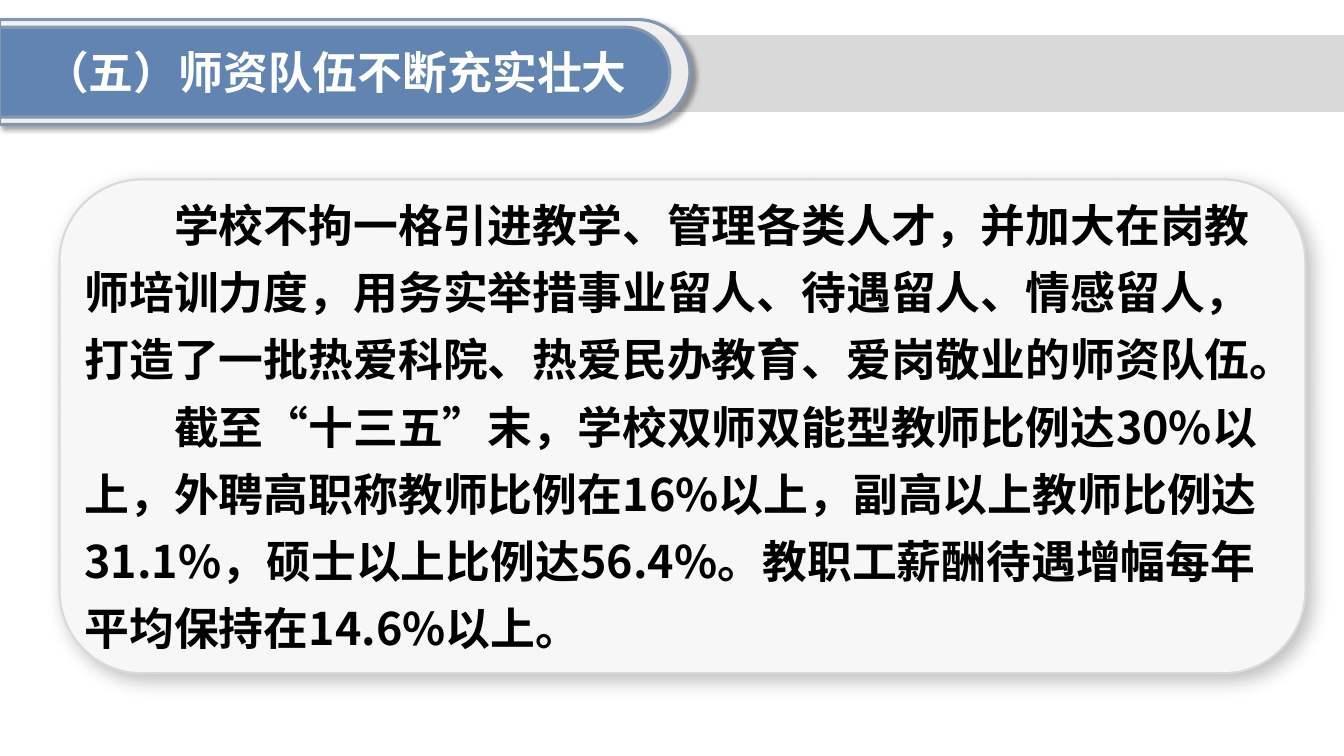
from lxml import etree
from pptx import Presentation
from pptx.dml.color import RGBColor
from pptx.enum import dml, shapes, text
from pptx.oxml import ns
from pptx.util import Pt

TITLE = "（五）师资队伍不断充实壮大"
BODY = [
    "学校不拘一格引进教学、管理各类人才，并加大在岗教师培训力度，用务实举措事业留人、待遇留人、情感留人，打造了一批热爱科院、热爱民办教育、爱岗敬业的师资队伍。",
    "截至“十三五”末，学校双师双能型教师比例达30%以上，外聘高职称教师比例在16%以上，副高以上教师比例达31.1%，硕士以上比例达56.4%。教职工薪酬待遇增幅每年平均保持在14.6%以上。",
]
FONT = "Noto Sans CJK SC"
WHITE = RGBColor(0xFF, 0xFF, 0xFF)
BLACK = RGBColor(0, 0, 0)
LIGHT_GRAY = RGBColor(0xD9, 0xD9, 0xD9)
BLUE = RGBColor(0x46, 0x6F, 0xA6)
BLUE_GRAY = RGBColor(0x84, 0x97, 0xB0)
HATCH = RGBColor(0xEE, 0xEE, 0xEE)
PAPER = RGBColor(0xF9, 0xF9, 0xF9)

TITLE_TABS = [
    ((-0.36, 14.04, 493.2, 74.88), WHITE, (40, 4, 3)),
    ((-0.36, 19.44, 478.8, 64.08), BLUE, None),
]
CARD = (42.48, 128.16, 889.92, 352.8)


def add_child(parent, tag, **attributes):
    child = etree.SubElement(parent, ns.qn(tag))
    for name, value in attributes.items():
        child.set(name, str(value))
    return child


def add_turned(kind, box, line_color, line_width):
    left, top, width, height = box
    offset = (width - height) / 2
    shape = slide.shapes.add_shape(
        kind, Pt(left + offset), Pt(top - offset), Pt(height), Pt(width))
    shape.rotation = 90
    shape.shadow.inherit = False
    shape.line.color.rgb = line_color
    shape.line.width = Pt(line_width)
    return shape


def add_shadow(shape, opacity, blur, distance):
    effects = shape._element.spPr.find(ns.qn("a:effectLst"))
    shadow = add_child(effects, "a:outerShdw", blurRad=Pt(blur), dist=Pt(distance),
                       dir=45 * 60000, algn="tl", rotWithShape=0)
    color = add_child(shadow, "a:srgbClr", val="000000")
    add_child(color, "a:alpha", val=opacity * 1000)


def add_text(box, paragraphs, color, indent, alignment=None, spacing=None):
    frame = slide.shapes.add_textbox(*map(Pt, box)).text_frame
    frame.word_wrap = True
    frame.auto_size = text.MSO_AUTO_SIZE.SHAPE_TO_FIT_TEXT
    for index, content in enumerate(paragraphs):
        paragraph = frame.add_paragraph() if index else frame.paragraphs[0]
        paragraph.alignment = alignment
        paragraph.line_spacing = spacing
        properties = paragraph._p.get_or_add_pPr()
        properties.set("marL", "0")
        properties.set("indent", str(Pt(indent)))
        run = paragraph.add_run()
        run.text = content
        run.font.size = Pt(32)
        run.font.bold = True
        run.font.color.rgb = color
        run.font.name = FONT
        add_child(run._r.get_or_add_rPr(), "a:ea", typeface=FONT)


presentation = Presentation()
presentation.slide_width = Pt(960)
presentation.slide_height = Pt(540)
slide = presentation.slides.add_slide(presentation.slide_layouts[6])

band = slide.shapes.add_shape(
    shapes.MSO_SHAPE.RECTANGLE, Pt(224.64), Pt(25.2), Pt(735.36), Pt(54.72))
band.shadow.inherit = False
band.fill.solid()
band.fill.fore_color.rgb = LIGHT_GRAY
band.line.fill.background()

for box, color, shadow in TITLE_TABS:
    tab = add_turned(shapes.MSO_SHAPE.ROUND_2_SAME_RECTANGLE, box, BLUE_GRAY, 2.25)
    tab.adjustments[0] = 0.5
    tab.adjustments[1] = 0
    tab.fill.solid()
    tab.fill.fore_color.rgb = color
    fill_color = tab._element.spPr.find(ns.qn("a:solidFill"))[0]
    add_child(fill_color, "a:alpha", val=83000)
    if shadow:
        add_shadow(tab, *shadow)

card = add_turned(shapes.MSO_SHAPE.ROUNDED_RECTANGLE, CARD, LIGHT_GRAY, 1.5)
card.fill.patterned()
card.fill.pattern = dml.MSO_PATTERN.DARK_DOWNWARD_DIAGONAL
card.fill.fore_color.rgb = HATCH
card.fill.back_color.rgb = PAPER
add_shadow(card, 25, 14, 6)

add_text((53.28, 128.16, 853.92, 346.32), BODY, BLACK, 64, spacing=Pt(48))
add_text((-1.44, 28.08, 482.4, 46.08), [TITLE], WHITE, -18,
         alignment=text.PP_ALIGN.CENTER)

presentation.save("out.pptx")
